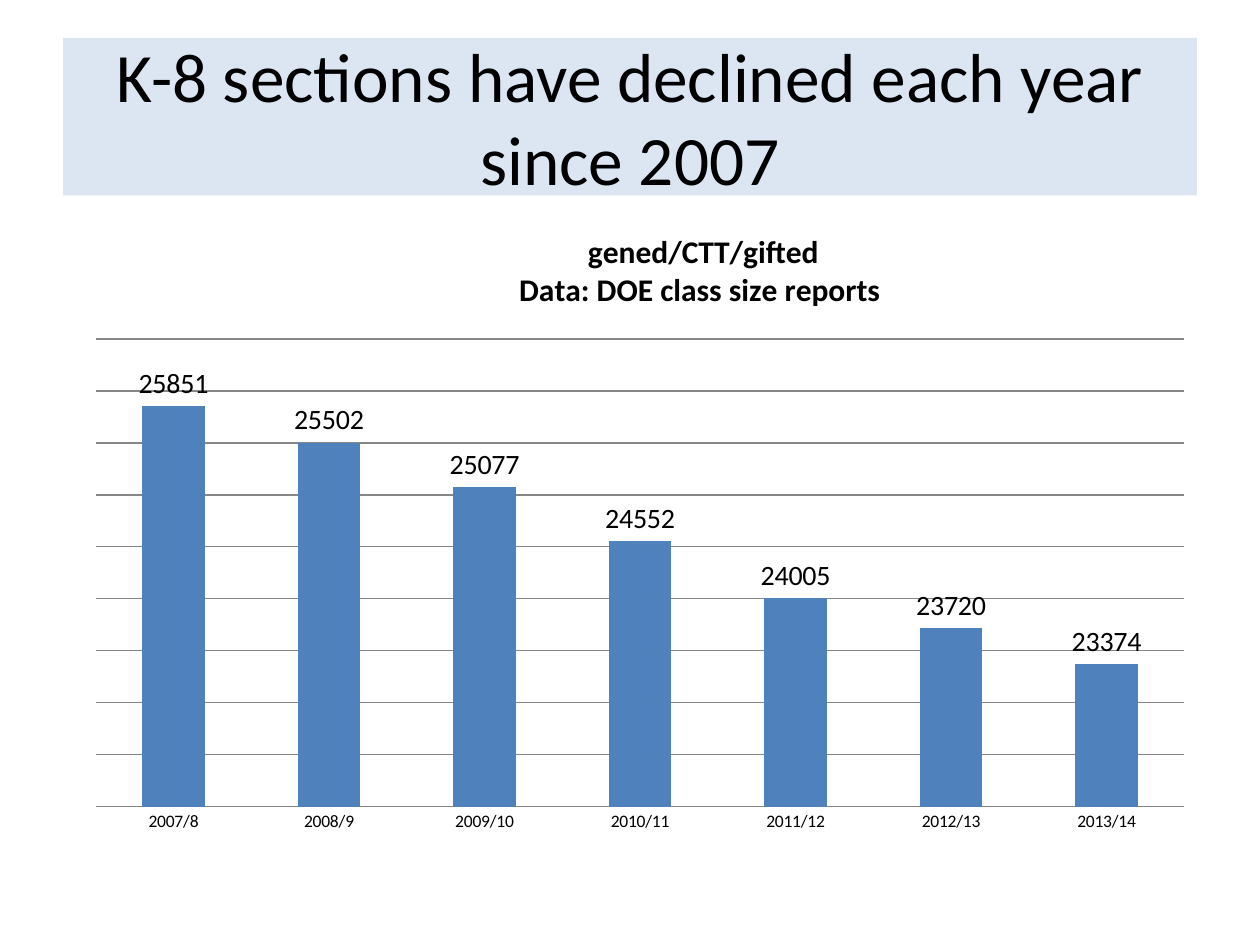
from lxml import etree
from pptx import Presentation
from pptx.chart.data import CategoryChartData
from pptx.dml.color import RGBColor
from pptx.enum.chart import XL_CHART_TYPE, XL_LABEL_POSITION, XL_TICK_MARK
from pptx.enum.text import MSO_ANCHOR, MSO_AUTO_SIZE, PP_ALIGN
from pptx.oxml.ns import qn
from pptx.util import Inches, Pt

COLUMNS = XL_CHART_TYPE.COLUMN_CLUSTERED
OUTSIDE_END = XL_LABEL_POSITION.OUTSIDE_END
NO_TICKS = XL_TICK_MARK.NONE
MIDDLE = MSO_ANCHOR.MIDDLE
NO_FIT = MSO_AUTO_SIZE.NONE
CENTER = PP_ALIGN.CENTER

THEME = {
    "font": "Calibri",
    "text": RGBColor(0, 0, 0),
    "band": RGBColor(0xDC, 0xE6, 0xF2),
    "bar": RGBColor(0x4F, 0x81, 0xBD),
    "grid": RGBColor(0x87, 0x87, 0x87),
    "title_size": Pt(39.6),
    "chart_title_size": Pt(18),
    "label_size": Pt(16),
    "axis_size": Pt(10),
}
SECTIONS = {
    "2007/8": 25851,
    "2008/9": 25502,
    "2009/10": 25077,
    "2010/11": 24552,
    "2011/12": 24005,
    "2012/13": 23720,
    "2013/14": 23374,
}


def style_font(font, size, bold=False):
    font.name = THEME["font"]
    font.size = size
    font.bold = bold
    font.color.rgb = THEME["text"]


def set_manual_layout(element, index, **settings):
    """Place a chart part by shares of the chart's width and height."""
    for old_layout in element.findall(qn("c:layout")):
        element.remove(old_layout)
    layout = etree.Element(qn("c:layout"))
    manual = etree.SubElement(layout, qn("c:manualLayout"))
    for tag, value in settings.items():
        etree.SubElement(manual, qn("c:" + tag)).set("val", str(value))
    element.insert(index, layout)


presentation = Presentation()
presentation.slide_width = Inches(10)
presentation.slide_height = Inches(7.5)
width, height = presentation.slide_width, presentation.slide_height
slide = presentation.slides.add_slide(presentation.slide_layouts[5])

# Title band
title = slide.shapes.title
title.left, title.top = int(width * 0.05), int(height * 0.04)
title.width, title.height = int(width * 0.9), Inches(1.25)
title.fill.solid()
title.fill.fore_color.rgb = THEME["band"]
title_frame = title.text_frame
title_frame.word_wrap = True
title_frame.auto_size = NO_FIT
title_frame.vertical_anchor = MIDDLE
paragraph = title_frame.paragraphs[0]
paragraph.alignment = CENTER
run = paragraph.add_run()
run.text = "K-8 sections have declined each year since 2007"
style_font(run.font, THEME["title_size"])

# Column chart
chart_data = CategoryChartData()
chart_data.categories = list(SECTIONS)
chart_data.add_series("Series 1", list(SECTIONS.values()))
chart = slide.shapes.add_chart(
    COLUMNS, Inches(0.58), Inches(1.75), int(width * 0.9), int(height * 0.66), chart_data
).chart
style_font(chart.font, THEME["axis_size"])
chart.has_legend = False

# Chart title
chart.has_title = True
chart_title_frame = chart.chart_title.text_frame
paragraph = chart_title_frame.paragraphs[0]
for line in ("gened/CTT/gifted", "Data: DOE class size reports "):
    if paragraph.runs:
        paragraph = chart_title_frame.add_paragraph()
    paragraph.alignment = CENTER
    run = paragraph.add_run()
    run.text = line
    style_font(run.font, THEME["chart_title_size"], bold=True)
chart.chart_title.include_in_layout = False
set_manual_layout(
    chart.chart_title._element, 1, xMode="edge", yMode="edge", x=0.39, y=0.01
)
set_manual_layout(
    chart._chartSpace.chart.plotArea, 0, layoutTarget="inner",
    xMode="edge", yMode="edge", x=0.02, y=0.19, w=0.96, h=0.75,
)

# Axes
value_axis = chart.value_axis
value_axis.minimum_scale, value_axis.maximum_scale = 22000, 26500
value_axis.major_unit = 500
value_axis.visible = False
value_axis.has_major_gridlines = True
category_axis = chart.category_axis
category_axis.major_tick_mark = NO_TICKS
category_axis.minor_tick_mark = NO_TICKS
for line_format in (value_axis.major_gridlines.format.line, category_axis.format.line):
    line_format.color.rgb = THEME["grid"]
    line_format.width = Pt(0.75)

# Bars and their values
plot = chart.plots[0]
plot.gap_width = 150
plot.vary_by_categories = False
series = plot.series[0]
series.format.fill.solid()
series.format.fill.fore_color.rgb = THEME["bar"]
labels = series.data_labels
labels.show_value = True
labels.position = OUTSIDE_END
style_font(labels.font, THEME["label_size"])

presentation.save("out.pptx")
